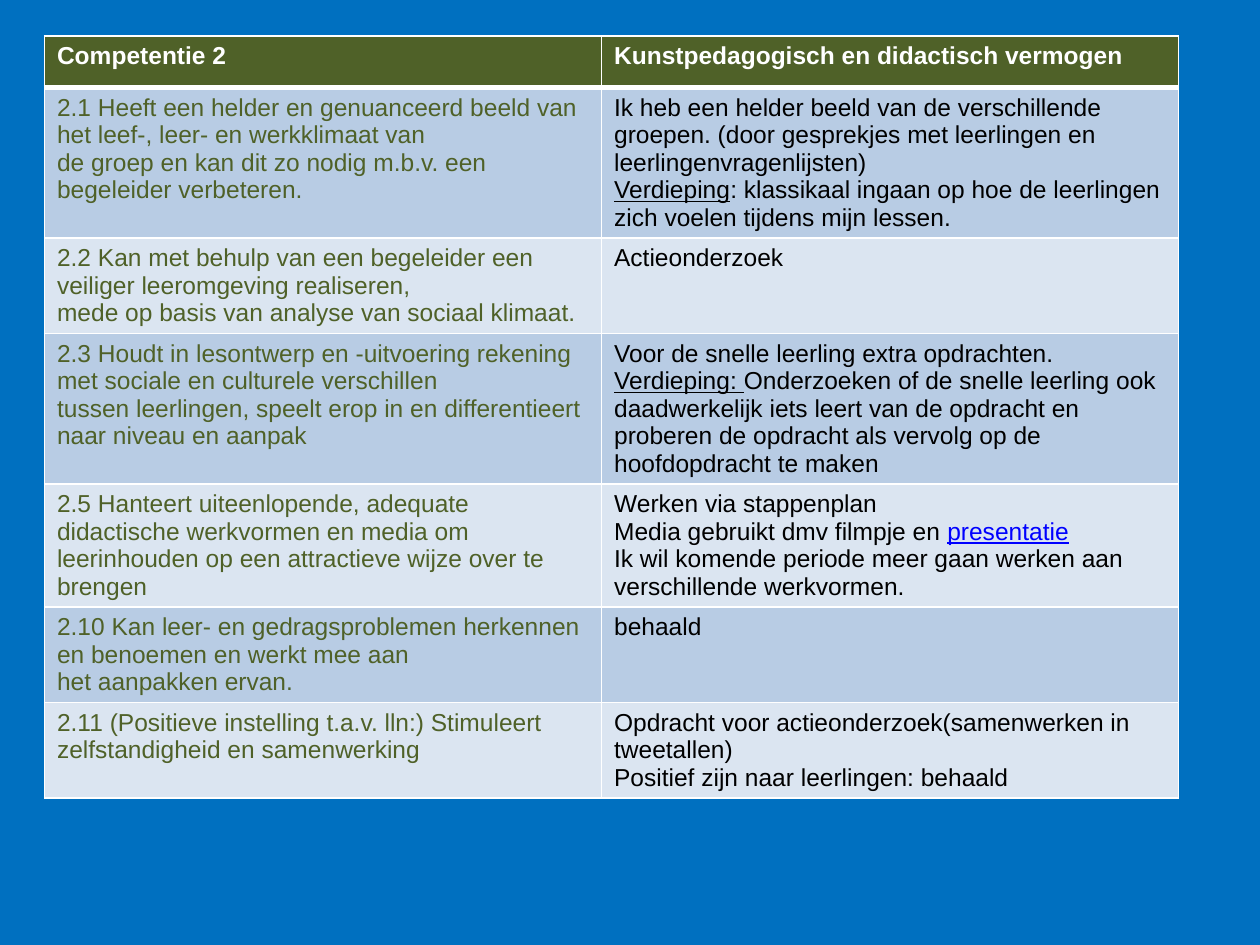
from pptx import Presentation
from pptx.util import Cm, Pt
from pptx.dml.color import RGBColor
from lxml.etree import SubElement
from pptx.oxml.ns import qn


def color(value):
    return RGBColor.from_string(value)


def add_border(cell, side, width):
    ln = SubElement(cell._tc.get_or_add_tcPr(), qn(f"a:ln{side}"), w=str(Pt(width)))
    fill = SubElement(ln, qn("a:solidFill"))
    SubElement(fill, qn("a:srgbClr"), val="FFFFFF")


WHITE, BLACK, GREEN, LINK = "FFFFFF", "000000", "4F6128", "0000FF"
BANDS = ["B8CCE4", "DBE5F1"]

rows = [
    (1.03, "Competentie 2", "Kunstpedagogisch en didactisch vermogen"),
    (3.02,
     "2.1 Heeft een helder en genuanceerd beeld van het leef-, leer- en werkklimaat van\n"
     "de groep en kan dit zo nodig m.b.v. een begeleider verbeteren.",
     "Ik heb een helder beeld van de verschillende groepen. (door gesprekjes met leerlingen en leerlingenvragenlijsten)\n"
     "|Verdieping|: klassikaal ingaan op hoe de leerlingen zich voelen tijdens mijn lessen."),
    (1.92,
     "2.2 Kan met behulp van een begeleider een veiliger leeromgeving realiseren,\n"
     "mede op basis van analyse van sociaal klimaat.",
     "Actieonderzoek"),
    (3.02,
     "2.3 Houdt in lesontwerp en -uitvoering rekening met sociale en culturele verschillen\n"
     "tussen leerlingen, speelt erop in en differentieert naar niveau en aanpak",
     "Voor de snelle leerling extra opdrachten.\n"
     "|Verdieping: |Onderzoeken of de snelle leerling ook daadwerkelijk iets leert van de opdracht "
     "en proberen de opdracht als vervolg op de hoofdopdracht te maken"),
    (2.46,
     "2.5 Hanteert uiteenlopende, adequate didactische werkvormen en media om\n"
     "leerinhouden op een attractieve wijze over te brengen",
     "Werken via stappenplan\n"
     "Media gebruikt dmv filmpje en |presentatie\n"
     "Ik wil komende periode meer gaan werken aan verschillende werkvormen."),
    (1.92,
     "2.10 Kan leer- en gedragsproblemen herkennen en benoemen en werkt mee aan\n"
     "het aanpakken ervan.",
     "behaald"),
    (1.92,
     "2.11 (Positieve instelling t.a.v. lln:) Stimuleert zelfstandigheid en samenwerking",
     "Opdracht voor actieonderzoek(samenwerken in tweetallen)\n"
     "Positief zijn naar leerlingen: behaald"),
]

prs = Presentation()
prs.slide_width, prs.slide_height = Cm(25.4), Cm(19.05)
s = prs.slides.add_slide(prs.slide_layouts[6])
s.background.fill.solid()
s.background.fill.fore_color.rgb = color("0070C0")

height = sum(row[0] for row in rows)
table = s.shapes.add_table(len(rows), 2, Cm(0.9), Cm(0.73), Cm(22.86), Cm(height)).table
table.columns[0].width = Cm(11.23)
table.columns[1].width = Cm(11.63)

for i, (row_height, *texts) in enumerate(rows):
    table.rows[i].height = Cm(row_height)
    for j, text in enumerate(texts):
        cell = table.cell(i, j)
        cell.margin_left = cell.margin_right = Cm(0.25)
        cell.margin_top = cell.margin_bottom = Cm(0.13)
        for side in "LRTB":
            heavy = (i, side) in [(0, "B"), (1, "T")]
            add_border(cell, side, 3 if heavy else 1)
        cell.fill.solid()
        cell.fill.fore_color.rgb = color(BANDS[(i - 1) % 2] if i else GREEN)
        tf = cell.text_frame
        tf.text = text.replace("|", "")
        for p, line in zip(tf.paragraphs, text.split("\n")):
            p.text = ""
            for k, part in enumerate(line.split("|")):
                if not part:
                    continue
                r = p.add_run()
                r.text = part
                r.font.name = "Arial"
                r.font.size = Pt(14)
                r.font.bold = i == 0
                r.font.underline = k == 1
                r.font.color.rgb = color(WHITE if i == 0 else GREEN if j == 0 else
                                         LINK if part == "presentatie" else BLACK)

prs.save("out.pptx")
